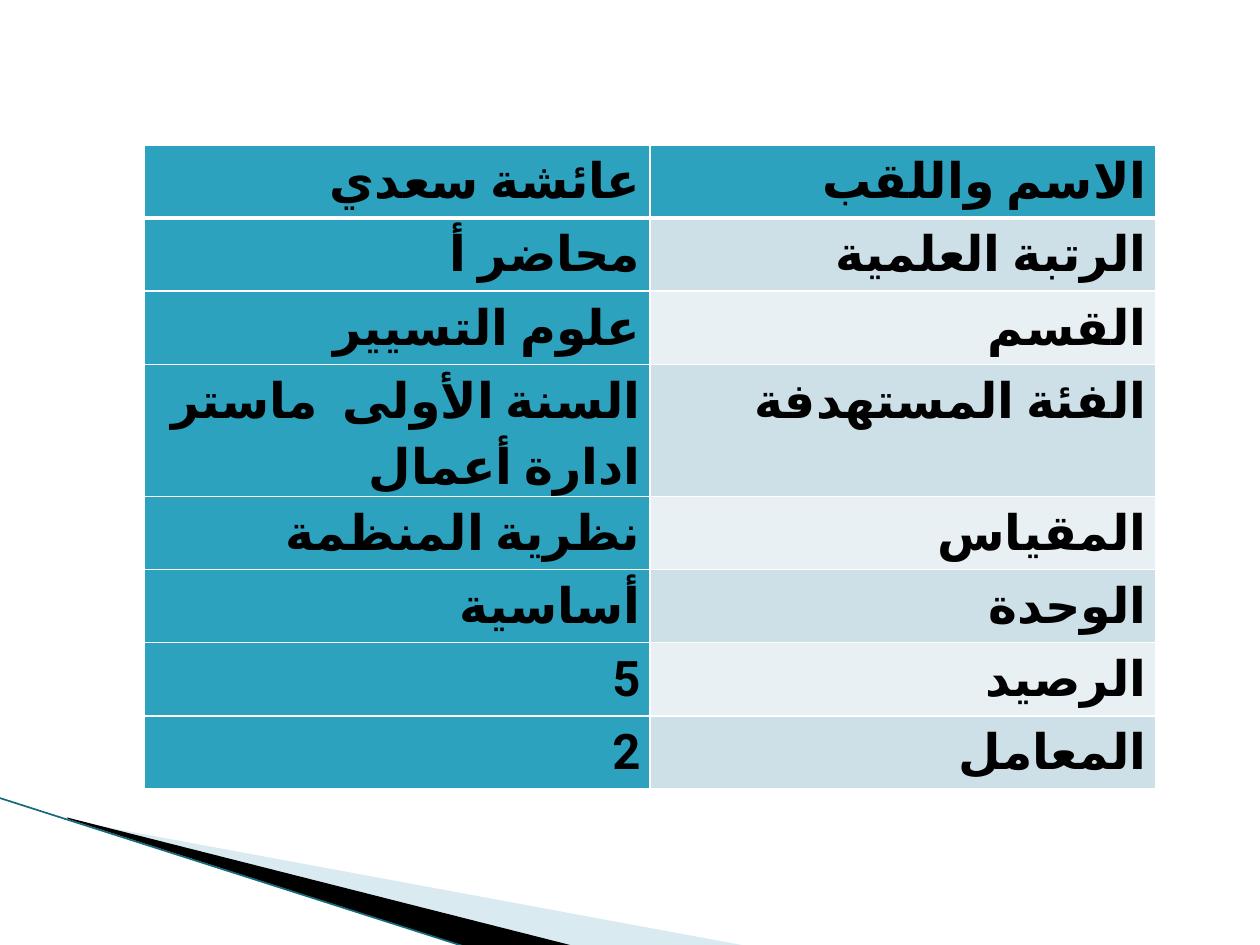
from lxml import etree
from pptx import Presentation
from pptx.dml.color import RGBColor
from pptx.enum.lang import MSO_LANGUAGE_ID
from pptx.enum.shapes import MSO_CONNECTOR
from pptx.enum.text import PP_ALIGN
from pptx.oxml.ns import qn
from pptx.util import Cm, Pt

ARABIC = MSO_LANGUAGE_ID.ARABIC_ALGERIA
STRAIGHT = MSO_CONNECTOR.STRAIGHT
RIGHT = PP_ALIGN.RIGHT

COLORS = {
    "text": "000000",
    "border": "FFFFFF",
    "teal": "2DA2BF",
    "band_dark": "CDE0E8",
    "band_light": "E8F0F4",
    "wedge_pale": "A0CBDC",
    "wedge_black": "000000",
    "edge": "16697A",
}

ROWS = [
    ("عائشة سعدي", "الاسم واللقب"),
    ("محاضر أ", "الرتبة العلمية"),
    ("علوم التسيير", "القسم "),
    ("السنة الأولى  ماستر ادارة أعمال", "الفئة المستهدفة"),
    ("نظرية المنظمة", "المقياس"),
    ("أساسية", "الوحدة"),
    ("5", "الرصيد"),
    ("2", "المعامل"),
]


def rgb(name):
    return RGBColor.from_string(COLORS[name])


def write_text(tf, text, size=28, font="Roboto", color="text", bold=True, spacing=1.15):
    p = tf.paragraphs[0]
    p.alignment = RIGHT
    p.line_spacing = spacing
    p._p.get_or_add_pPr().set("rtl", "1")
    r = p.add_run()
    r.text = text
    r.font.size = Pt(size)
    r.font.name = font
    r.font.bold = bold
    r.font.language_id = ARABIC
    r.font.color.rgb = rgb(color)
    etree.SubElement(r._r.get_or_add_rPr(), qn("a:cs"), typeface=font)


def set_borders(cell, **widths):
    tcPr = cell._tc.get_or_add_tcPr()
    for side in "LRTB":
        ln = etree.SubElement(tcPr, qn("a:ln" + side), w=str(Pt(widths.get(side, 1))))
        fill = etree.SubElement(ln, qn("a:solidFill"))
        etree.SubElement(fill, qn("a:srgbClr"), val=COLORS["border"])


def add_wedge(s, points, color, opacity=100):
    builder = s.shapes.build_freeform(*points[0], scale=1.0)
    builder.add_line_segments(points[1:], close=True)
    sp = builder.convert_to_shape()
    sp.shadow.inherit = False
    sp.fill.solid()
    sp.fill.fore_color.rgb = rgb(color)
    sp.line.fill.background()
    if opacity < 100:
        clr = sp._element.spPr.find(qn("a:solidFill")).find(qn("a:srgbClr"))
        etree.SubElement(clr, qn("a:alpha"), val=str(opacity * 1000))


def add_corner(s, left, top):
    def at(*points):
        return [(left + Cm(x), top + Cm(y)) for x, y in points]

    add_wedge(s, at((1.4, 0.46), (15.11, 3), (11.58, 3), (1.4, 0.43)), "wedge_pale", opacity=40)
    add_wedge(s, at((1.35, 0.4), (11.61, 3), (9.45, 3.02), (1.37, 0.43)), "wedge_black")
    start, end = at((-0.03, 0), (9.42, 3.02))
    edge = s.shapes.add_connector(STRAIGHT, *start, *end)
    edge.line.color.rgb = rgb("edge")
    edge.line.width = Pt(0.95)
    etree.SubElement(edge._element.spPr, qn("a:effectLst"))


def add_info_table(s, left, top, width, height):
    table = s.shapes.add_table(len(ROWS), 2, left, top, width, height).table
    for i, row in enumerate(ROWS):
        band = "teal" if i == 0 else "band_dark" if i % 2 else "band_light"
        for j, text in enumerate(row):
            cell = table.cell(i, j)
            cell.margin_left = cell.margin_right = Cm(0.19)
            cell.margin_top = cell.margin_bottom = 0
            set_borders(cell, T=3 if i == 1 else 1, B=3 if i == 0 else 1)
            cell.fill.solid()
            cell.fill.fore_color.rgb = rgb(band if j else "teal")
            write_text(cell.text_frame, text)


def main():
    prs = Presentation()
    prs.slide_width, prs.slide_height = Cm(25.4), Cm(19.05)
    s = prs.slides.add_slide(prs.slide_layouts[6])
    add_corner(s, 0, Cm(16.08))
    add_info_table(s, Cm(2.9), Cm(2.92), Cm(20.4), Cm(11.8))
    prs.save("out.pptx")


if __name__ == "__main__":
    main()
